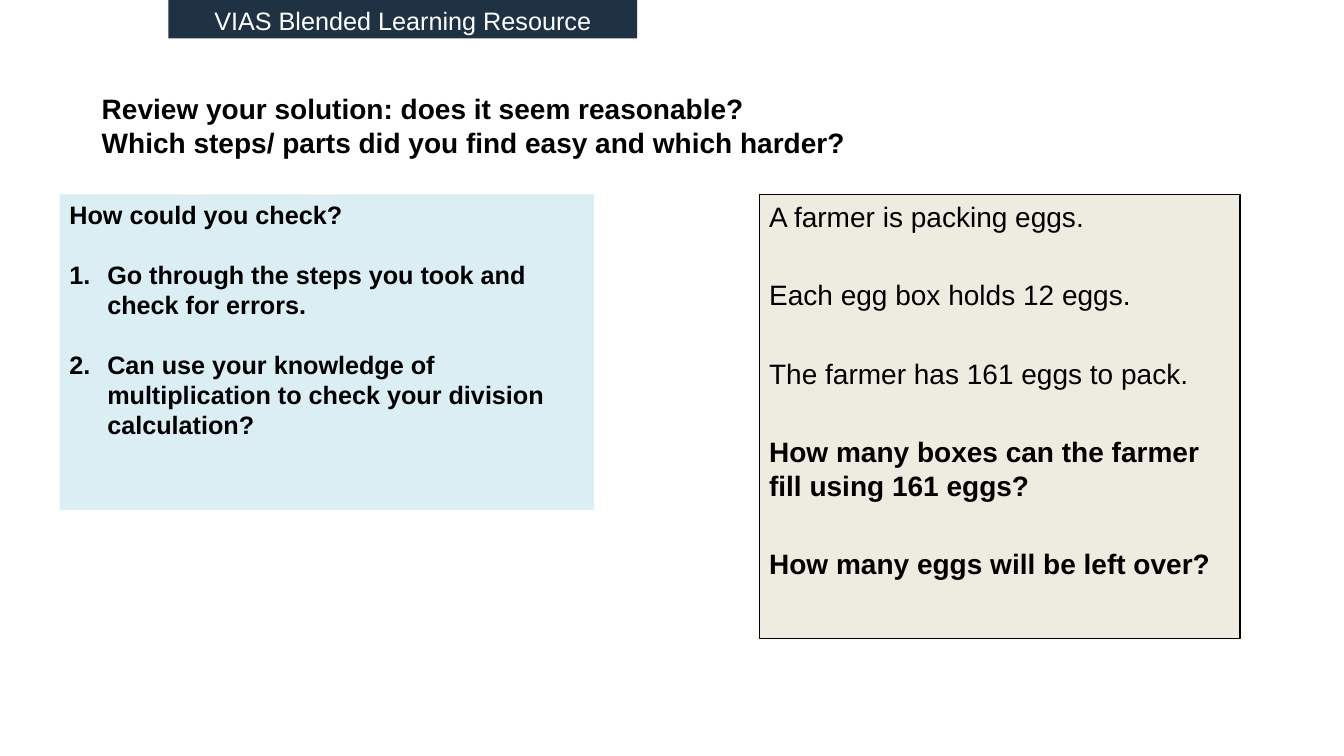
import pptx
import pptx.util
import pptx.dml.color
import pptx.enum.shapes
import pptx.enum.text

Pt = pptx.util.Pt
Rect = pptx.enum.shapes.MSO_SHAPE.RECTANGLE
Align = pptx.enum.text.PP_ALIGN
Anchor = pptx.enum.text.MSO_ANCHOR

deck = pptx.Presentation()
deck.slide_width = pptx.util.Inches(13.33)
deck.slide_height = pptx.util.Inches(7.5)
slide = deck.slides.add_slide(deck.slide_layouts[6])
col, row = deck.slide_width / 100, deck.slide_height / 100


def paint(part, code):
    """Give a fill, line or font a solid hex colour."""
    if hasattr(part, "solid"):
        part.solid()
        part = part.fore_color
    else:
        part = part.color
    part.rgb = pptx.dml.color.RGBColor.from_string(code)


# Each box: place in hundredths of the slide, fill, line, ink,
# font format, paragraph format, gap between paragraphs, anchor,
# and lines of (text, bold, numbered)
boxes = [
    # Title
    ((6.83, 12.27, 67.52, 8.53), None, None, "000000",
     {"size": Pt(20)}, {"alignment": Align.LEFT}, 0, Anchor.MIDDLE,
     [("Review your solution: does it seem reasonable?\v"
       "Which steps/ parts did you find easy and which harder?", True, False)]),
    # Ways to check
    ((4.43, 25.73, 39.76, 41.73), "DBEEF4", None, "000000",
     {"size": Pt(18)}, {"alignment": Align.LEFT}, 21, Anchor.TOP,
     [("How could you check?", True, False),
      ("Go through the steps you took and check for errors.", True, True),
      ("Can use your knowledge of multiplication to check your division "
       "calculation?", True, True)]),
    # Banner
    ((12.53, 0, 34.88, 5.07), "1F3244", None, "FFFFFF",
     {"size": Pt(18)}, {"alignment": Align.CENTER}, 0, Anchor.TOP,
     [("VIAS Blended Learning Resource", False, False)]),
    # Egg puzzle
    ((56.49, 25.73, 35.78, 58.67), "EEECE1", "000000", "000000",
     {"size": Pt(20)}, {"alignment": Align.LEFT}, 32, Anchor.TOP,
     [("A farmer is packing eggs.", False, False),
      ("Each egg box holds 12 eggs.", False, False),
      ("The farmer has 161 eggs to pack.", False, False),
      ("How many boxes can the farmer fill using 161 eggs?", True, False),
      ("How many eggs will be left over?", True, False)]),
]

for place, fill, line, ink, font, para, gap, anchor, lines in boxes:
    left, top, wide, high = place
    area = [int(n) for n in (left * col, top * row, wide * col, high * row)]

    # Outline and ground
    if fill:
        box = slide.shapes.add_shape(Rect, *area)
        box.shadow.inherit = False
        paint(box.fill, fill)
        if line:
            paint(box.line, line)
            box.line.width = Pt(0.75)
        else:
            box.line.fill.background()
    else:
        box = slide.shapes.add_textbox(*area)
    frame = box.text_frame
    frame.word_wrap = True
    frame.vertical_anchor = anchor

    # Text
    for step, (text, bold, listed) in enumerate(lines):
        item = frame.add_paragraph() if step else frame.paragraphs[0]
        item.text = text
        if listed:
            props = item._p.get_or_add_pPr()
            props.set("marL", str(Pt(27)))
            props.set("indent", str(-Pt(27)))
            mark = pptx.oxml.parse_xml(
                '<a:buAutoNum xmlns:a="http://schemas.openxmlformats.org/'
                'drawingml/2006/main" type="arabicPeriod"/>')
            props.append(mark)
        if step:
            item.space_before = Pt(gap)
        for name, value in para.items():
            setattr(item, name, value)
        for run in item.runs:
            for name, value in {"name": "Arial", "bold": bold, **font}.items():
                setattr(run.font, name, value)
            paint(run.font, ink)

deck.save("out.pptx")
